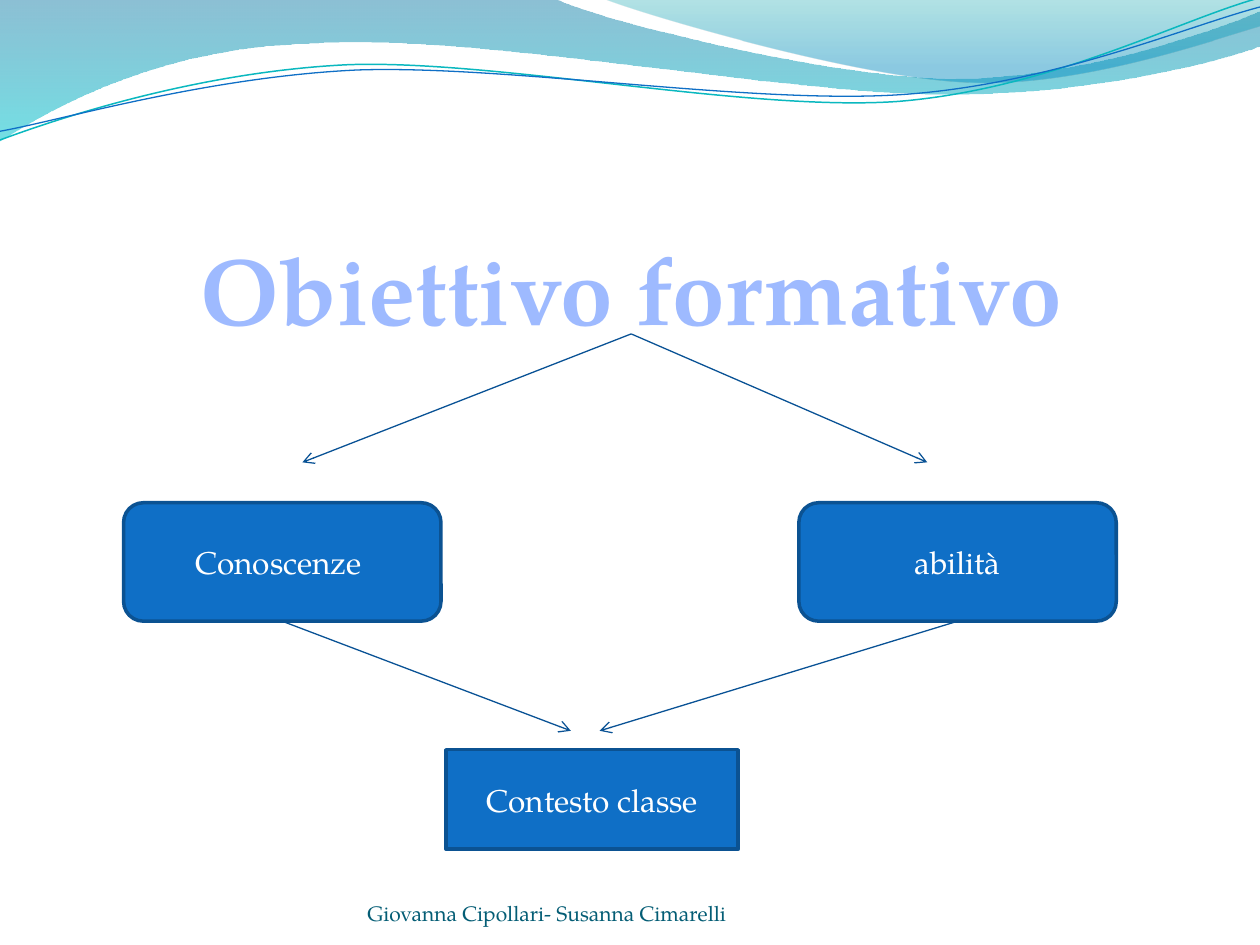
from pptx import Presentation
from pptx.dml.color import RGBColor
from pptx.enum.shapes import MSO_CONNECTOR, MSO_SHAPE
from pptx.enum.text import MSO_ANCHOR, MSO_AUTO_SIZE, PP_ALIGN
from pptx.oxml.ns import qn
from pptx.util import Pt
from lxml import etree

STRAIGHT = MSO_CONNECTOR.STRAIGHT
RECT, ROUNDED = MSO_SHAPE.RECTANGLE, MSO_SHAPE.ROUNDED_RECTANGLE
TOP, MIDDLE, BOTTOM = MSO_ANCHOR.TOP, MSO_ANCHOR.MIDDLE, MSO_ANCHOR.BOTTOM
LEFT, CENTER = PP_ALIGN.LEFT, PP_ALIGN.CENTER
FIT_SHAPE = MSO_AUTO_SIZE.SHAPE_TO_FIT_TEXT
TITLE_ONLY = 5
BOTTOM_SIDE = 2
FONT = "TeX Gyre Pagella"
COLORS = {
    "box": "0F6FC6", "box_line": "0B5292", "arrow": "095295",
    "title": "9EBAFF", "footer": "045D75", "white": "FFFFFF",
    "deep": "0074A1", "cyan": "00C6CF", "teal": "00A1A9",
    "sky": "008BBF", "aqua_line": "0AB8BF", "blue_line": "0F6FC6",
}

BACK_WAVE = [(0, 0), (317, -0.7),
             (343, 12, 478, 45, 546, 45), (614, 45, 690, 19, 720, 6.5),
             (720.7, 26),
             (708, 32, 626, 55, 537, 54), (448, 54, 275, 20, 185, 24.5),
             (93, 26, 33, 60, -0.7, 81)]
FRONT_WAVE = [(345, -0.7),
              (366, 8, 491, 45, 554, 47), (616, 50, 692, 23, 720, 15),
              (720, 0)]
AQUA_CURVE = [(0, 80), (35, 67, 114, 41, 199, 37),
              (284, 34, 427, 64, 513, 58), (600, 51, 675, 11, 719, -1)]
BLUE_CURVE = [(0, 75), (34, 69, 118, 44, 204, 40),
              (290, 37, 430, 60, 516, 54), (602, 48, 678, 15, 720, 4)]


def rgb(name):
    return RGBColor.from_string(COLORS[name])


def bend(s, segments):
    lines = list(s._element.spPr.iter(qn("a:lnTo")))
    for line, seg in zip(lines, segments):
        if len(seg) == 2:
            continue
        line.tag = qn("a:cubicBezTo")
        for pt in list(line):
            line.remove(pt)
        for x, y in zip(seg[0::2], seg[1::2]):
            etree.SubElement(line, qn("a:pt"),
                             x=str(Pt(x) - s.left), y=str(Pt(y) - s.top))


def add_outline(slide, segments, close):
    points = [(Pt(seg[-2]), Pt(seg[-1])) for seg in segments]
    builder = slide.shapes.build_freeform(*points[0], scale=1.0)
    builder.add_line_segments(points[1:], close=close)
    s = builder.convert_to_shape()
    bend(s, segments[1:])
    s.shadow.inherit = False
    return s


def add_wave(slide, segments, stops):
    s = add_outline(slide, segments, True)
    s.line.fill.background()
    s.fill.gradient()
    s.fill.gradient_angle = 270
    for stop, (position, color, _) in zip(s.fill.gradient_stops, stops):
        stop.position = position
        stop.color.rgb = rgb(color)
    colors = s._element.spPr.iter(qn("a:srgbClr"))
    for clr, (_, _, opacity) in zip(list(colors), stops):
        etree.SubElement(clr, qn("a:alpha"), val=str(opacity * 1000))


def add_curve(slide, segments, color, width):
    s = add_outline(slide, segments, False)
    s.fill.background()
    s.line.color.rgb = rgb(color)
    s.line.width = Pt(width)


def write(s, text, size, color, align, anchor, bold=False):
    tf = s.text_frame
    tf.vertical_anchor = anchor
    p = tf.paragraphs[0]
    p.text = text
    p.alignment = align
    p.font.name = FONT
    p.font.size = Pt(size)
    p.font.bold = bold
    p.font.color.rgb = rgb(color)
    return tf


def add_box(slide, shape, text, left, top, width, height):
    s = slide.shapes.add_shape(shape, Pt(left), Pt(top), Pt(width), Pt(height))
    s.shadow.inherit = False
    s.fill.solid()
    s.fill.fore_color.rgb = rgb("box")
    s.line.color.rgb = rgb("box_line")
    s.line.width = Pt(2)
    write(s, text, 18, "white", CENTER, MIDDLE)
    return s


def add_arrow(slide, start, end, source=None):
    s = slide.shapes.add_connector(STRAIGHT, *map(Pt, start + end))
    if source is not None:
        s.begin_connect(source, BOTTOM_SIDE)
    s.line.color.rgb = rgb("arrow")
    s.line.width = Pt(0.75)
    etree.SubElement(s.line._get_or_add_ln(), qn("a:tailEnd"), type="arrow")
    etree.SubElement(s._element.spPr, qn("a:effectLst"))


def set_title(slide, text):
    s = slide.shapes.title
    s.left, s.top, s.width, s.height = Pt(98.6), Pt(128.2), Pt(524.2), Pt(72.7)
    tf = write(s, text, 54, "title", CENTER, TOP, bold=True)
    tf.word_wrap = False
    tf.auto_size = FIT_SHAPE


def add_footer(slide, text):
    s = slide.shapes.add_textbox(Pt(210), Pt(500.4), Pt(264), Pt(28.8))
    tf = write(s, text, 12, "footer", LEFT, BOTTOM)
    tf.word_wrap = True
    tf.margin_left = tf.margin_right = tf.margin_top = tf.margin_bottom = 0


def main():
    prs = Presentation()
    prs.slide_width, prs.slide_height = Pt(720), Pt(540)
    slide = prs.slides.add_slide(prs.slide_layouts[TITLE_ONLY])

    add_wave(slide, BACK_WAVE, [(0, "deep", 45), (1, "cyan", 55)])
    add_wave(slide, FRONT_WAVE, [(0, "teal", 30), (0.8, "sky", 45)])
    add_curve(slide, AQUA_CURVE, "aqua_line", 0.85)
    add_curve(slide, BLUE_CURVE, "blue_line", 0.75)

    add_footer(slide, "Giovanna Cipollari- Susanna Cimarelli")
    set_title(slide, "Obiettivo formativo")

    branches = [("Conoscenze ", 70.6, 172.8, 326.2),
                ("abilità", 456.5, 529.9, 342.7)]
    for text, left, upper_tip, lower_tip in branches:
        add_arrow(slide, (360.7, 190.8), (upper_tip, 264.2))
        box = add_box(slide, ROUNDED, text, left, 287.3, 181.4, 67.7)
        add_arrow(slide, (left + 90.7, 355), (lower_tip, 417.6), box)
    add_box(slide, RECT, "Contesto classe", 254.9, 428.4, 167, 56.9)

    prs.save("out.pptx")


if __name__ == "__main__":
    main()
